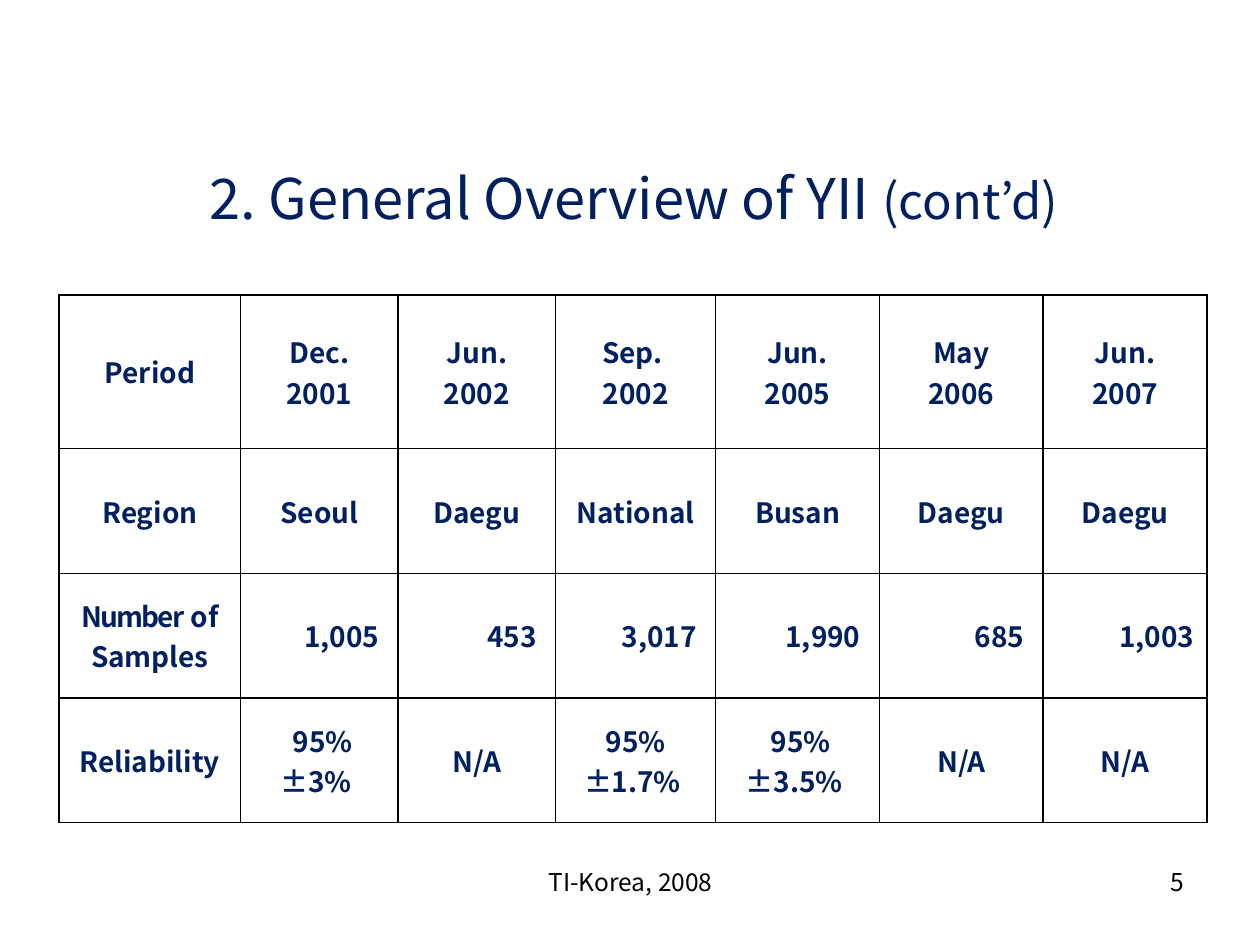
from dataclasses import dataclass

from lxml import etree
from pptx import Presentation
from pptx import util as u
from pptx.dml.color import RGBColor
from pptx.enum import text
from pptx.oxml.ns import qn

COLORS = {"navy": "002060", "black": "000000"}
FONT = "Noto Sans CJK KR"
CENTER, RIGHT = text.PP_ALIGN.CENTER, text.PP_ALIGN.RIGHT
HANGING = 0.49
COLUMNS = [1.44, 1.25, 1.25, 1.27, 1.3, 1.3, 1.3]


@dataclass
class Span:
    words: str
    size: float
    color: str = "navy"
    bold: bool = False
    spacing: float = 0


@dataclass
class Row:
    height: float
    cells: list[str]
    align: text.PP_ALIGN = CENTER


ROWS = [
    Row(1.22, ["Period", "Dec.\n2001", "Jun.\n2002", "Sep. \n2002",
               "Jun.\n2005", "May\n2006", "Jun.\n2007"]),
    Row(0.99, ["Region", "Seoul", "Daegu", "National", "Busan", "Daegu", "Daegu"]),
    Row(0.99, ["Number of Samples", "1,005 ", "453 ", "3,017 ", "1,990 ", "685 ", "1,003"], RIGHT),
    Row(0.99, ["Reliability", " 95%\n±3% ", " N/A ", "95%\n±1.7% ",
               " 95%\n±3.5% ", "N/A", "N/A"]),
]


def write(frame, lines: list[list[Span]], *, align=CENTER, hanging: float = 0) -> None:
    """Fill a text frame with one paragraph per list of spans."""
    frame.word_wrap = True
    for index, spans in enumerate(lines):
        para = frame.add_paragraph() if index else frame.paragraphs[0]
        para.alignment = align
        if hanging:
            properties = para._p.get_or_add_pPr()
            properties.set("marL", str(u.Inches(hanging)))
            properties.set("indent", str(-u.Inches(hanging)))
        for span in spans:
            run = para.add_run()
            run.text = span.words
            run.font.size = u.Pt(span.size)
            run.font.bold = span.bold
            run.font.name = FONT
            run.font.color.rgb = RGBColor.from_string(COLORS[span.color])
            run_properties = run._r.get_or_add_rPr()
            etree.SubElement(run_properties, qn("a:ea"), typeface=FONT)
            if span.spacing:
                run_properties.set("spc", str(int(span.spacing * 100)))


def add_text(page, left: float, top: float, width: float, height: float,
             spans: list[Span], *, align=CENTER, anchor=text.MSO_ANCHOR.TOP) -> None:
    box = page.shapes.add_textbox(*map(u.Inches, (left, top, width, height)))
    box.text_frame.vertical_anchor = anchor
    write(box.text_frame, [spans], align=align)


def add_borders(cell, width: float = 1) -> None:
    properties = cell._tc.get_or_add_tcPr()
    for position, side in enumerate(("a:lnL", "a:lnR", "a:lnT", "a:lnB")):
        line = etree.Element(qn(side), w=str(u.Pt(width)))
        fill = etree.SubElement(line, qn("a:solidFill"))
        etree.SubElement(fill, qn("a:srgbClr"), val=COLORS["black"])
        properties.insert(position, line)


def add_survey_table(page, left: float, top: float) -> None:
    height = sum(row.height for row in ROWS)
    frame = page.shapes.add_table(len(ROWS), len(COLUMNS), *map(
        u.Inches, (left, top, sum(COLUMNS), height)))
    table = frame.table
    table.first_row = table.horz_banding = False
    for column, width in zip(table.columns, COLUMNS):
        column.width = u.Inches(width)
    for row_index, row in enumerate(ROWS):
        table.rows[row_index].height = u.Inches(row.height)
        for column_index, words in enumerate(row.cells):
            cell = table.cell(row_index, column_index)
            cell.fill.background()
            cell.vertical_anchor = text.MSO_ANCHOR.MIDDLE
            add_borders(cell)
            lines = [[Span(line, 16, bold=True)] for line in words.split("\n")]
            hanging = HANGING
            if words == "Number of Samples":
                lines = [[Span("Number", 16, bold=True, spacing=-1),
                          Span(" of Samples", 16, bold=True)]]
                hanging = 0
            write(cell.text_frame, lines, hanging=hanging,
                  align=row.align if column_index else CENTER)


def main() -> None:
    deck = Presentation()
    deck.slide_width, deck.slide_height = u.Inches(10), u.Inches(7.5)
    page = deck.slides.add_slide(deck.slide_layouts[6])
    add_text(page, 0.53, 0.94, 9, 1.25,
             [Span("2. General Overview of YII ", 32), Span("(cont’d)", 28)],
             anchor=text.MSO_ANCHOR.MIDDLE)
    add_survey_table(page, 0.47, 2.34)
    add_text(page, 3.42, 6.83, 3.17, 0.52, [Span("TI-Korea, 2008", 14, "black")])
    add_text(page, 7.17, 6.83, 2.33, 0.52, [Span("5", 14, "black")], align=RIGHT)
    deck.save("out.pptx")


if __name__ == "__main__":
    main()
